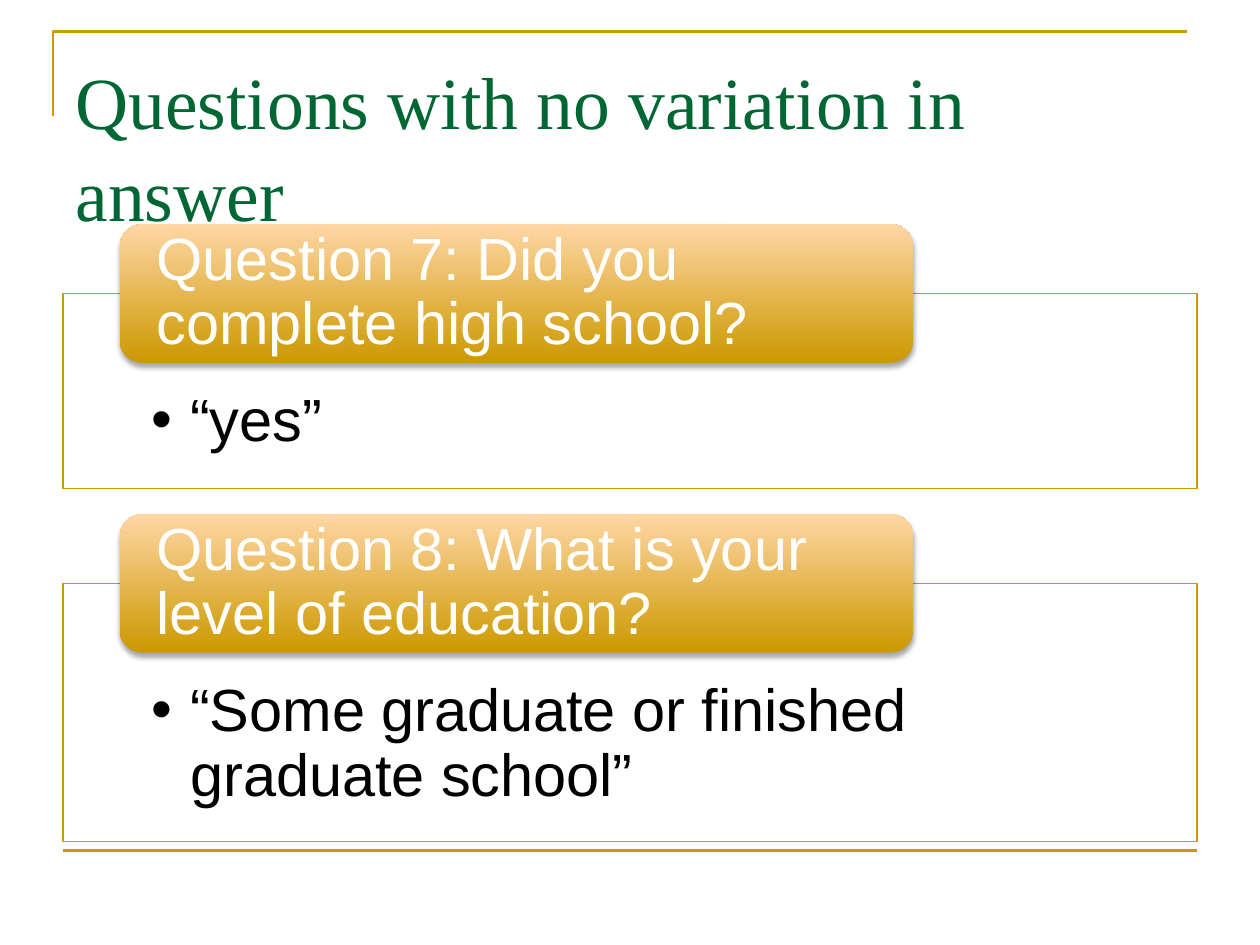
import pptx
import pptx.dml.color
import pptx.enum.shapes
import pptx.enum.text
import pptx.oxml
import pptx.oxml.ns
import pptx.util

COLOURS = {"gold": "CC9900", "peach": "FFD6A5", "green": "006633",
           "white": "FFFFFF", "black": "000000"}
COLUMNS, ROWS = 20, 15
ANCHOR = pptx.enum.text.MSO_ANCHOR
SHAPES = pptx.enum.shapes.MSO_SHAPE
QUESTIONS = [
    ("Question 7: Did you complete high school?", "“yes”", 3.1),
    ("Question 8: What is your level of education?",
     "“Some graduate or finished graduate school”", 4.1),
]


def colour(name):
    return pptx.dml.color.RGBColor.from_string(COLOURS[name])


def assign(target, values):
    for name, value in values.items():
        setattr(target, name, value)


class SlideBuilder:
    """Places styled elements on a grid of COLUMNS by ROWS."""

    def __init__(self, deck):
        self.column = deck.slide_width / COLUMNS
        self.row = deck.slide_height / ROWS
        self.slide = deck.slides.add_slide(deck.slide_layouts[3])

    def area(self, left, top, width, height):
        return {"left": round(left * self.column), "top": round(top * self.row),
                "width": round(width * self.column), "height": round(height * self.row)}

    def set_text(self, box, text, font, size, tint, margins, anchor, spacing):
        """Set the text; margins are left, top, right, bottom in inches."""
        frame = box.text_frame
        frame.text = text
        sides = ("margin_left", "margin_top", "margin_right", "margin_bottom")
        assign(frame, {"word_wrap": True, "vertical_anchor": anchor,
                       "auto_size": pptx.enum.text.MSO_AUTO_SIZE.NONE})
        assign(frame, {side: pptx.util.Inches(gap) for side, gap in zip(sides, margins)})
        para = frame.paragraphs[0]
        assign(para, {"alignment": pptx.enum.text.PP_ALIGN.LEFT, "line_spacing": spacing,
                      "space_before": pptx.util.Pt(0)})
        span = para.runs[0]
        assign(span.font, {"name": font, "size": pptx.util.Pt(size)})
        span.font.color.rgb = colour(tint)
        return para

    def outline(self, element, width):
        element.line.color.rgb = colour("gold")
        element.line.width = pptx.util.Pt(width)

    def corner(self, left, top, width, height):
        """Draw an open path up the left side and along the top."""
        points = [(left, top + height), (left, top), (left + width, top)]
        start, *others = [(round(x * self.column), round(y * self.row)) for x, y in points]
        builder = self.slide.shapes.build_freeform(*start)
        builder.add_line_segments(others, close=False)
        shape = builder.convert_to_shape()
        shape.shadow.inherit = False
        shape.fill.background()
        self.outline(shape, 1.5)

    def rule(self, left, top, width):
        place = self.area(left, top, width, 0)
        line = self.slide.shapes.add_connector(
            pptx.enum.shapes.MSO_CONNECTOR.STRAIGHT, place["left"], place["top"],
            place["left"] + place["width"], place["top"])
        self.outline(line, 1.5)
        line._element.spPr.append(pptx.oxml.parse_xml(
            f'<a:effectLst {pptx.oxml.ns.nsdecls("a")}/>'))

    def title(self, text, *place):
        box = self.slide.shapes.title
        assign(box, self.area(*place))
        self.set_text(box, text, "Times New Roman", 42, "green",
                      (0.1, 0.12, 0.1, 0), ANCHOR.TOP, 1.04)

    def answer(self, index, text, *place):
        box = self.slide.placeholders[index]
        assign(box, self.area(*place))
        box.fill.solid()
        box.fill.fore_color.rgb = colour("white")
        self.outline(box, 0.75)
        para = self.set_text(box, text, "Arial", 34, "black",
                             (0.7, 0.77, 0.7, 0.26), ANCHOR.TOP, 0.9)
        indent = pptx.util.Inches(0.31)
        properties = para._p.get_or_add_pPr()
        properties.set("marL", str(indent))
        properties.set("indent", str(-indent))

    def question(self, text, *place):
        shape = self.slide.shapes.add_shape(SHAPES.ROUNDED_RECTANGLE,
                                            **self.area(*place))
        shape.line.fill.background()
        shape.fill.gradient()
        shape.fill.gradient_angle = 90
        for stop, name in zip(shape.fill.gradient_stops, ("gold", "peach")):
            stop.color.rgb = colour(name)
        self.drop_shadow(shape)
        self.set_text(shape, text, "Arial", 34, "white",
                      (0.24, 0, 0.24, 0), ANCHOR.MIDDLE, 0.9)

    def drop_shadow(self, shape):
        shape.shadow.inherit = False
        effects = shape._element.spPr.find(pptx.oxml.ns.qn("a:effectLst"))
        effects.append(pptx.oxml.parse_xml(
            f'<a:outerShdw {pptx.oxml.ns.nsdecls("a")} blurRad="{pptx.util.Pt(3.1)}" '
            f'dist="{pptx.util.Pt(1.8)}" dir="5400000" rotWithShape="0">'
            f'<a:srgbClr val="{COLOURS["black"]}"><a:alpha val="35000"/></a:srgbClr>'
            '</a:outerShdw>'))


def main():
    deck = pptx.Presentation()
    assign(deck, {"slide_width": pptx.util.Inches(10), "slide_height": pptx.util.Inches(7.5)})
    page = SlideBuilder(deck)
    page.corner(0.84, 0.5, 18, 1.34)
    page.rule(1, 13.5, 18)
    page.title("Questions with no variation in answer", 1, 0.6, 18, 2.5)

    top, label_height, gap = 3.56, 2.2, 0.4
    for index, (question, answer, height) in enumerate(QUESTIONS, start=1):
        frame_top = top + label_height / 2
        page.answer(index, answer, 1, frame_top, 18, height)
        page.question(question, 1.9, top, 12.6, label_height)
        top = frame_top + height + gap
    deck.save("out.pptx")


if __name__ == "__main__":
    main()
